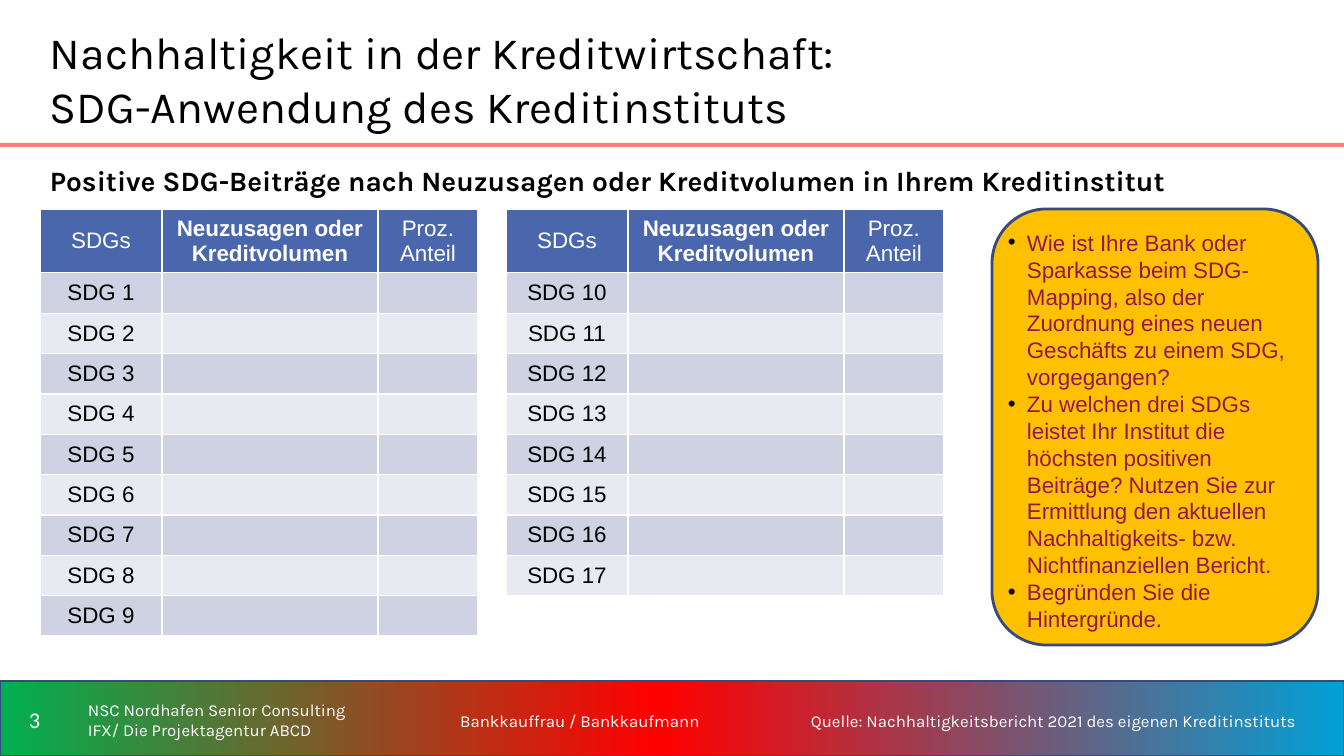
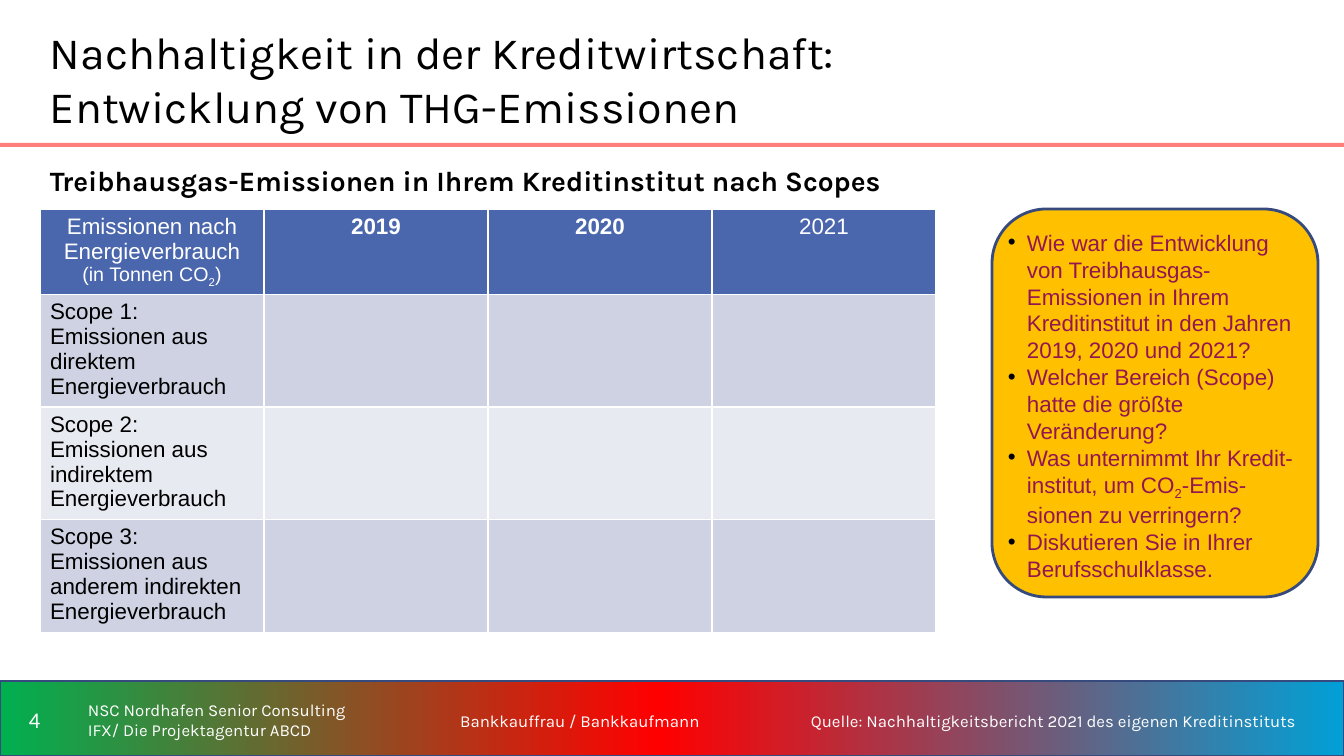
from copy import deepcopy
from dataclasses import dataclass

from lxml import etree
from pptx import Presentation
from pptx import util as u
from pptx.dml.color import RGBColor
from pptx.enum import shapes, text
from pptx.oxml import ns


@dataclass(frozen=True)
class Theme:
    black: str = "000000"
    white: str = "FFFFFF"
    edge: str = "364A7D"
    rule: str = "FF7E79"
    head: str = "4A66AC"
    odd: str = "CED2E2"
    even: str = "E8EAF1"
    card: str = "FFC000"
    task: str = "941651"
    fade: tuple = ((0, "00B050"), (0.49, "FF0000"), (1, "01A0D6"))
    brand: str = "Karla"
    plain: str = "Arial"
    digit: str = "Calibri"
    title: int = 32
    lead: int = 20
    body: int = 16
    unit: int = 14
    small: int = 12


T = Theme()
LEFT, MID = text.PP_ALIGN.LEFT, text.PP_ALIGN.CENTER
TOP, CORE = text.MSO_ANCHOR.TOP, text.MSO_ANCHOR.MIDDLE
WIDE, HIGH = 1344, 756


def px(n):
    return u.Emu(round(n * 914400 / 100.8))


def rgb(code):
    return RGBColor.from_string(code)


def bullet(para):
    props = para._p.get_or_add_pPr()
    props.set("marL", str(px(19)))
    props.set("indent", str(-px(19)))
    color = etree.SubElement(props, ns.qn("a:buClr"))
    etree.SubElement(color, ns.qn("a:srgbClr"), val=T.black)
    etree.SubElement(props, ns.qn("a:buFont"), typeface=T.plain)
    etree.SubElement(props, ns.qn("a:buChar"), char="•")


def write(frame, paras, size=T.body, font=T.plain, color=T.black, bold=False,
          align=LEFT, space=None, dots=False):
    sizes = size if isinstance(size, tuple) else (size,) * len(paras)
    for i, (parts, points) in enumerate(zip(paras, sizes)):
        para = frame.add_paragraph() if i else frame.paragraphs[0]
        if dots:
            bullet(para)
        para.alignment = align
        if space:
            para.line_spacing = space
        for j, part in enumerate([parts] if isinstance(parts, str) else parts):
            for k, line in enumerate(part.split("\n")):
                if k:
                    para.add_line_break()
                run = para.add_run()
                run.text = line
                run.font.size = u.Pt(points)
                run.font.name = font
                run.font.bold = bold
                run.font.color.rgb = rgb(color)
                if j % 2:
                    run.font._element.set("baseline", "-25000")


def label(slide, box, words, anchor=TOP, **style):
    frame = slide.shapes.add_textbox(*map(px, box)).text_frame
    frame.word_wrap = True
    frame.vertical_anchor = anchor
    write(frame, [words], **style)


def block(slide, box, fill=None, line=None, weight=1,
          kind=shapes.MSO_SHAPE.RECTANGLE):
    shape = slide.shapes.add_shape(kind, *map(px, box))
    shape.shadow.inherit = False
    if fill:
        shape.fill.solid()
        shape.fill.fore_color.rgb = rgb(fill)
    if line:
        shape.line.color.rgb = rgb(line)
        shape.line.width = u.Pt(weight)
    else:
        shape.line.fill.background()
    return shape


def top(slide, box, title, lead):
    x, y, w, h = box
    label(slide, (x + 40, y + 20, w - 74, 119), title, size=T.title, font=T.brand)
    block(slide, (x, y + h - 4, w, 4), T.rule)
    label(slide, (x + 40, y + h + 12, w - 74, 44), lead, size=T.lead,
          font=T.brand, bold=True)


def foot(slide, box, page):
    x, y, w, h = box
    band = block(slide, box, line=T.edge)
    band.fill.gradient()
    band.fill.gradient_angle = 0
    first = band._element.spPr.find(".//" + ns.qn("a:gs"))
    first.addnext(deepcopy(first))
    for stop, (place, color) in zip(band.fill.gradient_stops, T.fade):
        stop.position = place
        stop.color.rgb = rgb(color)
    small = dict(size=T.small, font=T.brand)
    for left, width, words, style in (
        (0, 69, str(page), dict(font=T.digit, align=MID)),
        (78, 280, "NSC Nordhafen Senior Consulting IFX/ Die Projektagentur ABCD", small),
        (369, 422, "Bankkauffrau / Bankkaufmann", dict(small, align=MID, space=1.1)),
        (801, 509, "Quelle: Nachhaltigkeitsbericht 2021 des eigenen Kreditinstituts",
         dict(small, space=1.1)),
    ):
        label(slide, (x + left, y + 8, width, h - 13), words, CORE,
              color=T.white, **style)


def card(slide, box, tasks):
    shape = block(slide, box, T.card, T.edge, 2,
                  shapes.MSO_SHAPE.ROUNDED_RECTANGLE)
    shape.adjustments[0] = 0.167
    frame = shape.text_frame
    frame.word_wrap = True
    frame.vertical_anchor = TOP
    frame.margin_left = frame.margin_right = frame.margin_bottom = 0
    frame.margin_top = px(4)
    write(frame, tasks, color=T.task, dots=True)


def grid(slide, spot, cols, heads, names, first, step, anchor, align):
    count = len(names) + 1
    box = (*spot, sum(cols), first + step * len(names))
    table = slide.shapes.add_table(count, len(cols), *map(px, box)).table
    for col, width in zip(table.columns, cols):
        col.width = px(width)
    for r, row in enumerate(table.rows):
        row.height = px(step if r else first)
        for c, cell in enumerate(row.cells):
            cell.vertical_anchor = anchor
            if anchor == TOP:
                cell.margin_bottom = 0
            cell.fill.solid()
            tint = (T.odd if r % 2 else T.even) if r else T.head
            cell.fill.fore_color.rgb = rgb(tint)
            if r == 0:
                paras = heads[c]
                write(cell.text_frame, paras, color=T.white, align=MID,
                      size=(T.body, T.unit)[:len(paras)],
                      bold=0 < c < len(cols) - 1)
            elif c == 0:
                write(cell.text_frame, names[r - 1], align=align)


def base(deck, page, title, lead):
    slide = deck.slides.add_slide(deck.slide_layouts[6])
    foot(slide, (0, 681, WIDE, HIGH - 681), page)
    top(slide, (0, 0, WIDE, 147), "Nachhaltigkeit in der Kreditwirtschaft:\n" + title, lead)
    return slide


def goals(deck):
    slide = base(deck, 3, "SDG-Anwendung des Kreditinstituts",
                 "Positive SDG-Beiträge nach Neuzusagen oder Kreditvolumen in Ihrem Kreditinstitut")
    heads = [["SDGs"], ["Neuzusagen oder Kreditvolumen"], ["Proz. Anteil"]]
    for x, span in ((40, range(1, 10)), (506, range(10, 18))):
        grid(slide, (x, 209), (122, 216, 100), heads,
             [[f"SDG {n}"] for n in span], 62, 40, CORE, MID)
    card(slide, (992, 209, 326, 436), [
        "Wie ist Ihre Bank oder Sparkasse beim SDG- Mapping, also der Zuordnung "
        "eines neuen Geschäfts zu einem SDG, vorgegangen?",
        "Zu welchen drei SDGs leistet Ihr Institut die höchsten positiven Beiträge? "
        "Nutzen Sie zur Ermittlung den aktuellen Nachhaltigkeits- bzw. "
        "Nichtfinanziellen Bericht.",
        "Begründen Sie die Hintergründe.",
    ])


def gases(deck):
    slide = base(deck, 4, "Entwicklung von THG-Emissionen",
                 "Treibhausgas-Emissionen in Ihrem Kreditinstitut nach Scopes")
    heads = [["Emissionen nach Energieverbrauch", ("(in Tonnen CO", "2", ")")],
             ["2019"], ["2020"], ["2021"]]
    names = [[f"Scope {n}:", f"Emissionen aus {kind} Energieverbrauch"]
             for n, kind in enumerate(("direktem", "indirektem", "anderem indirekten"), 1)]
    grid(slide, (40, 209), (224,) * 4, heads, names, 85, 110, TOP, LEFT)
    card(slide, (992, 209, 326, 388), [
        "Wie war die Entwicklung von Treibhausgas-Emissionen in Ihrem "
        "Kreditinstitut in den Jahren 2019, 2020 und 2021?",
        "Welcher Bereich (Scope) hatte die größte Veränderung?",
        ("Was unternimmt Ihr Kredit- institut, um CO", "2",
         "-Emis- sionen zu verringern?"),
        "Diskutieren Sie in Ihrer Berufsschulklasse.",
    ])


def main():
    deck = Presentation()
    deck.slide_width, deck.slide_height = px(WIDE), px(HIGH)
    goals(deck)
    gases(deck)
    deck.save("out.pptx")


if __name__ == "__main__":
    main()
